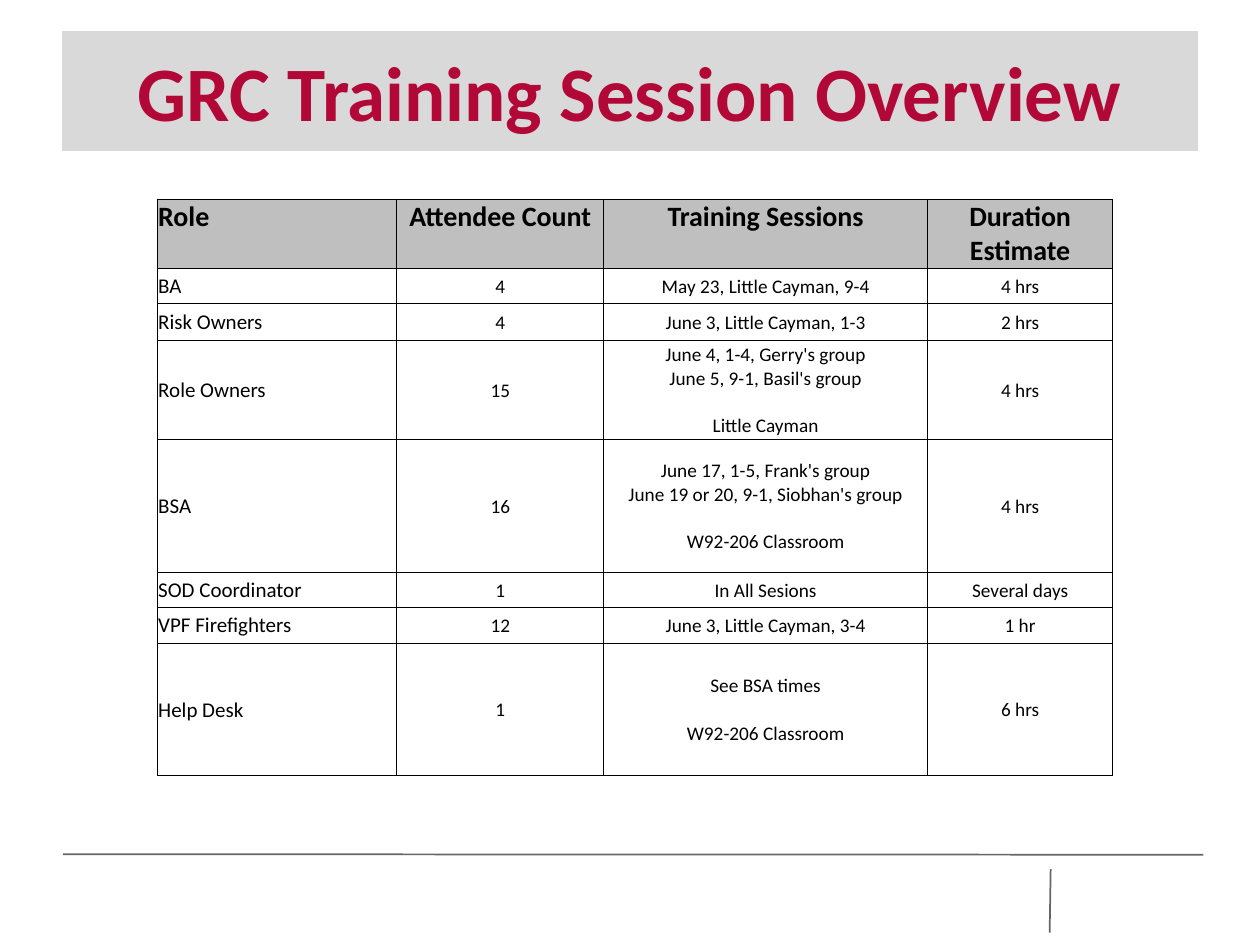
from typing import NamedTuple

from lxml import etree
from pptx import Presentation
from pptx.dml.color import RGBColor
from pptx.enum.shapes import MSO_CONNECTOR, MSO_SHAPE
from pptx.enum.text import MSO_ANCHOR, PP_ALIGN
from pptx.oxml.ns import qn
from pptx.util import Cm, Pt

RECT = MSO_SHAPE.RECTANGLE
STRAIGHT = MSO_CONNECTOR.STRAIGHT
TOP, MIDDLE = MSO_ANCHOR.TOP, MSO_ANCHOR.MIDDLE
LEFT, CENTER = PP_ALIGN.LEFT, PP_ALIGN.CENTER

FONT = "Calibri"
BLACK = RGBColor(0x00, 0x00, 0x00)
CRIMSON = RGBColor(0xB2, 0x08, 0x38)
TITLE_GREY = RGBColor(0xD9, 0xD9, 0xD9)
HEADER_GREY = RGBColor(0xBF, 0xBF, 0xBF)
RULE_GREY = RGBColor(0x66, 0x66, 0x66)

VENUE_GAP = Pt(13.4)
COLUMN_WIDTHS = (4.83, 4.17, 6.53, 3.73)
HEADERS = ("Role", "Attendee Count", "Training Sessions", "Duration Estimate")
HEADER_HEIGHT = 1.4


class Training(NamedTuple):
    height: float
    role: str
    count: str
    sessions: str
    duration: str
    venue: str = ""


class Rule(NamedTuple):
    x1: float
    y1: float
    x2: float
    y2: float


TRAININGS = (
    Training(0.71, "BA", "4", "May 23, Little Cayman, 9-4", "4 hrs"),
    Training(0.74, "Risk Owners", "4", "June 3, Little Cayman, 1-3", "2 hrs"),
    Training(2.0, "Role Owners", "15",
             "June 4, 1-4, Gerry's group\nJune 5, 9-1, Basil's group",
             "4 hrs", "Little Cayman"),
    Training(2.68, "BSA", "16",
             "June 17, 1-5, Frank's group\nJune 19 or 20, 9-1, Siobhan's group",
             "4 hrs", "W92-206 Classroom"),
    Training(0.71, "SOD Coordinator", "1", "In All Sesions", "Several days"),
    Training(0.71, "VPF Firefighters", "12", "June 3, Little Cayman, 3-4", "1 hr"),
    Training(2.68, "Help Desk", "1", "See BSA times", "6 hrs", "W92-206 Classroom"),
)

FOOTER_RULES = (
    Rule(1.27, 17.22, 24.26, 17.23),
    Rule(21.16, 18.8, 21.18, 17.52),
)


def write_text(tf, text: str, size: float, color: RGBColor, bold: bool, align) -> None:
    tf.text = text
    for p in tf.paragraphs:
        p.alignment = align
        for r in p.runs:
            r.font.name = FONT
            r.font.size = Pt(size)
            r.font.bold = bold
            r.font.color.rgb = color


def add_rule(slide, rule: Rule) -> None:
    line = slide.shapes.add_connector(STRAIGHT, *(Cm(v) for v in rule))
    line.line.color.rgb = RULE_GREY
    line.line.width = Pt(1)
    etree.SubElement(line._element.spPr, qn("a:effectLst"))


def add_title(slide, text: str) -> None:
    sp = slide.shapes.add_shape(RECT, Cm(1.27), Cm(0.63), Cm(22.86), Cm(2.4))
    sp.shadow.inherit = False
    sp.fill.solid()
    sp.fill.fore_color.rgb = TITLE_GREY
    sp.line.color.rgb = TITLE_GREY
    sp.line.width = Pt(0.75)
    tf = sp.text_frame
    tf.word_wrap = True
    tf.vertical_anchor = MIDDLE
    write_text(tf, text, 44, CRIMSON, True, CENTER)


def set_borders(cell) -> None:
    """Draw a thin black line on all four sides of a cell."""
    tc_pr = cell._tc.get_or_add_tcPr()
    for side in ("lnL", "lnR", "lnT", "lnB"):
        ln = etree.SubElement(tc_pr, qn(f"a:{side}"), w=str(Pt(0.5)))
        fill = etree.SubElement(ln, qn("a:solidFill"))
        etree.SubElement(fill, qn("a:srgbClr"), val=str(BLACK))


def fill_cell(cell, text: str, size: float, align, header: bool) -> None:
    set_borders(cell)
    if header:
        cell.fill.solid()
        cell.fill.fore_color.rgb = HEADER_GREY
    else:
        cell.fill.background()
    cell.vertical_anchor = TOP if header else MIDDLE
    cell.margin_left = cell.margin_right = cell.margin_top = Cm(0.02)
    cell.margin_bottom = 0
    write_text(cell.text_frame, text, size, BLACK, header, align)


def add_training_table(slide) -> None:
    heights = (HEADER_HEIGHT, *(t.height for t in TRAININGS))
    frame = slide.shapes.add_table(
        len(heights), len(HEADERS), Cm(3.17), Cm(4.01),
        Cm(sum(COLUMN_WIDTHS)), Cm(sum(heights)))
    table = frame.table
    table.first_row = table.horz_banding = False
    for column, width in zip(table.columns, COLUMN_WIDTHS):
        column.width = Cm(width)
    for row, height in zip(table.rows, heights):
        row.height = Cm(height)

    for c, header in enumerate(HEADERS):
        fill_cell(table.cell(0, c), header, 16, CENTER if c else LEFT, True)
    for r, t in enumerate(TRAININGS, start=1):
        sessions = f"{t.sessions}\n{t.venue}" if t.venue else t.sessions
        for c, text in enumerate((t.role, t.count, sessions, t.duration)):
            size, align = (11, CENTER) if c else (12, LEFT)
            fill_cell(table.cell(r, c), text, size, align, False)
        if t.venue:
            table.cell(r, 2).text_frame.paragraphs[-1].space_before = VENUE_GAP


def main() -> None:
    prs = Presentation()
    prs.slide_width, prs.slide_height = Cm(25.4), Cm(19.05)
    slide = prs.slides.add_slide(prs.slide_layouts[6])
    for rule in FOOTER_RULES:
        add_rule(slide, rule)
    add_title(slide, "GRC Training Session Overview")
    add_training_table(slide)
    prs.save("out.pptx")


if __name__ == "__main__":
    main()
